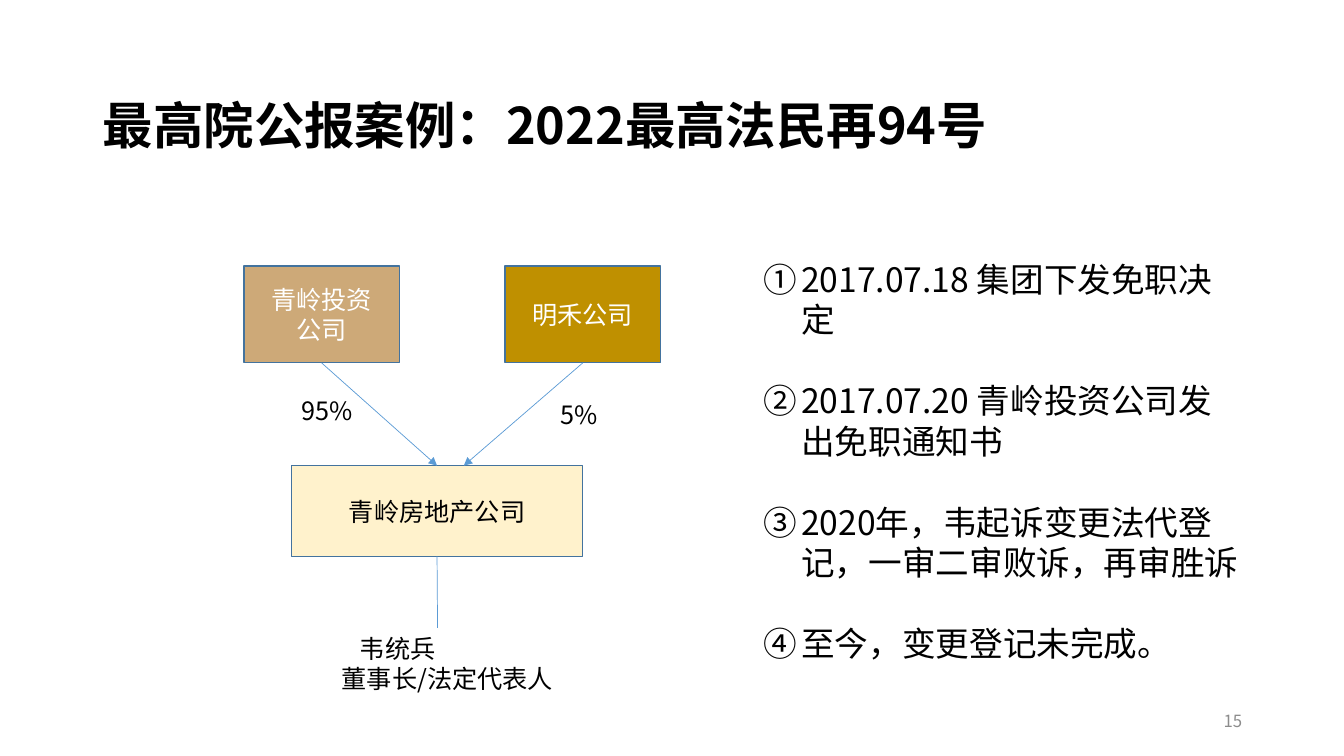
from lxml import etree
from pptx import Presentation
from pptx import util as u
from pptx.dml import color
from pptx.enum import shapes, text
from pptx.oxml import ns

INK = {"black": "000000", "white": "FFFFFF", "grey": "8C8C8C", "tan": "CDA978",
       "gold": "BF9000", "cream": "FFF2CC", "edge": "43739E", "blue": "5B9BD5"}
SIDE = text.PP_ALIGN
TOP = text.MSO_ANCHOR.TOP
MID = text.MSO_ANCHOR.MIDDLE


class Deck:
    font = "Noto Sans CJK SC"

    def __init__(self):
        self.prs = Presentation()
        self.prs.slide_width = u.Inches(13.33)
        self.prs.slide_height = u.Inches(7.5)
        self.slide = self.prs.slides.add_slide(self.prs.slide_layouts[5])

    def rgb(self, name):
        return color.RGBColor.from_string(INK[name])

    def sub(self, parent, tag, **attrs):
        return etree.SubElement(parent, ns.qn(tag), **attrs)

    def words(self, shape, lines, size, ink="black", align=SIDE.LEFT, bold=False, anchor=TOP):
        frame = shape.text_frame
        frame.text = "\n".join(lines)
        frame.word_wrap = True
        frame.auto_size = text.MSO_AUTO_SIZE.NONE
        frame.vertical_anchor = anchor
        for para in frame.paragraphs:
            para.alignment = align
            para.line_spacing = u.Pt(round(size * 1.2, 1))
            for run in para.runs:
                run.font.name = self.font
                run.font.size = u.Pt(size)
                run.font.bold = bold
                run.font.color.rgb = self.rgb(ink)
                self.sub(run.font._element, "a:ea", typeface=self.font)
        return frame.paragraphs

    def title(self, line, x, y, w, h):
        head = self.slide.shapes.title
        head.left, head.top, head.width, head.height = map(u.Inches, (x, y, w, h))
        self.words(head, [line], 36, bold=True)

    def label(self, lines, x, y, w, h, size=18, **style):
        area = self.slide.shapes.add_textbox(*map(u.Inches, (x, y, w, h)))
        return self.words(area, lines, size, **style)

    def box(self, lines, x, y, w, h, fill, ink):
        rect = self.slide.shapes.add_shape(shapes.MSO_SHAPE.RECTANGLE, *map(u.Inches, (x, y, w, h)))
        rect.shadow.inherit = False
        rect.fill.solid()
        rect.fill.fore_color.rgb = self.rgb(fill)
        rect.line.color.rgb = self.rgb("edge")
        rect.line.width = u.Pt(1)
        self.words(rect, lines, 18, ink, SIDE.CENTER, anchor=MID)
        return rect

    def link(self, start, x1, y1, x2, y2, goal=None, arrow=True):
        line = self.slide.shapes.add_connector(shapes.MSO_CONNECTOR.STRAIGHT, *map(u.Inches, (x1, y1, x2, y2)))
        line.begin_connect(start, 2)
        if goal is not None:
            line.end_connect(goal, 0)
        line.line.color.rgb = self.rgb("blue")
        line.line.width = u.Pt(0.5)
        if arrow:
            self.sub(line.line._get_or_add_ln(), "a:tailEnd", type="triangle")
        self.sub(line._element.spPr, "a:effectLst")

    def steps(self, lines, x, y, w, h):
        paras = self.label(lines, x, y, w, h, 24)
        for para in paras:
            props = para._p.get_or_add_pPr()
            props.set("marL", str(u.Inches(0.38)))
            props.set("indent", str(-u.Inches(0.38)))
            if para is not paras[-1]:
                para.space_after = u.Pt(29)
            self.sub(props, "a:buFont", typeface=self.font)
            self.sub(props, "a:buAutoNum", type="circleNumDbPlain")


def main():
    deck = Deck()
    deck.title("最高院公报案例：2022最高法民再94号", 0.92, 0.88, 9.72, 0.71)
    deck.label(["15"], 9.42, 6.95, 3, 0.4, 12, ink="grey", align=SIDE.RIGHT, anchor=MID)

    major = deck.box(["青岭投资", "公司"], 2.42, 2.64, 1.54, 0.96, "tan", "white")
    minor = deck.box(["明禾公司"], 5.01, 2.64, 1.54, 0.96, "gold", "white")
    estate = deck.box(["青岭房地产公司"], 2.89, 4.62, 2.89, 0.9, "cream", "black")
    deck.link(major, 3.19, 3.6, 4.34, 4.62, goal=estate)
    deck.link(minor, 5.78, 3.6, 4.6, 4.62)
    deck.link(estate, 4.34, 5.52, 4.34, 6.23, arrow=False)

    deck.label(["95%"], 2.89, 3.87, 1.18, 0.4)
    deck.label(["5%"], 5.46, 3.91, 1.18, 0.4)
    role = deck.label(["韦统兵", "董事长/法定代表人"], 3.19, 6.23, 2.89, 0.71)
    for para, inset in zip(role, (0.28, 0.1)):
        para._p.get_or_add_pPr().set("marL", str(u.Inches(inset)))

    deck.steps(["2017.07.18 集团下发免职决定",
                "2017.07.20 青岭投资公司发出免职通知书",
                "2020年，韦起诉变更法代登记，一审二审败诉，再审胜诉",
                "至今，变更登记未完成。"], 7.47, 2.52, 4.93, 4.14)
    deck.prs.save("out.pptx")


if __name__ == "__main__":
    main()
